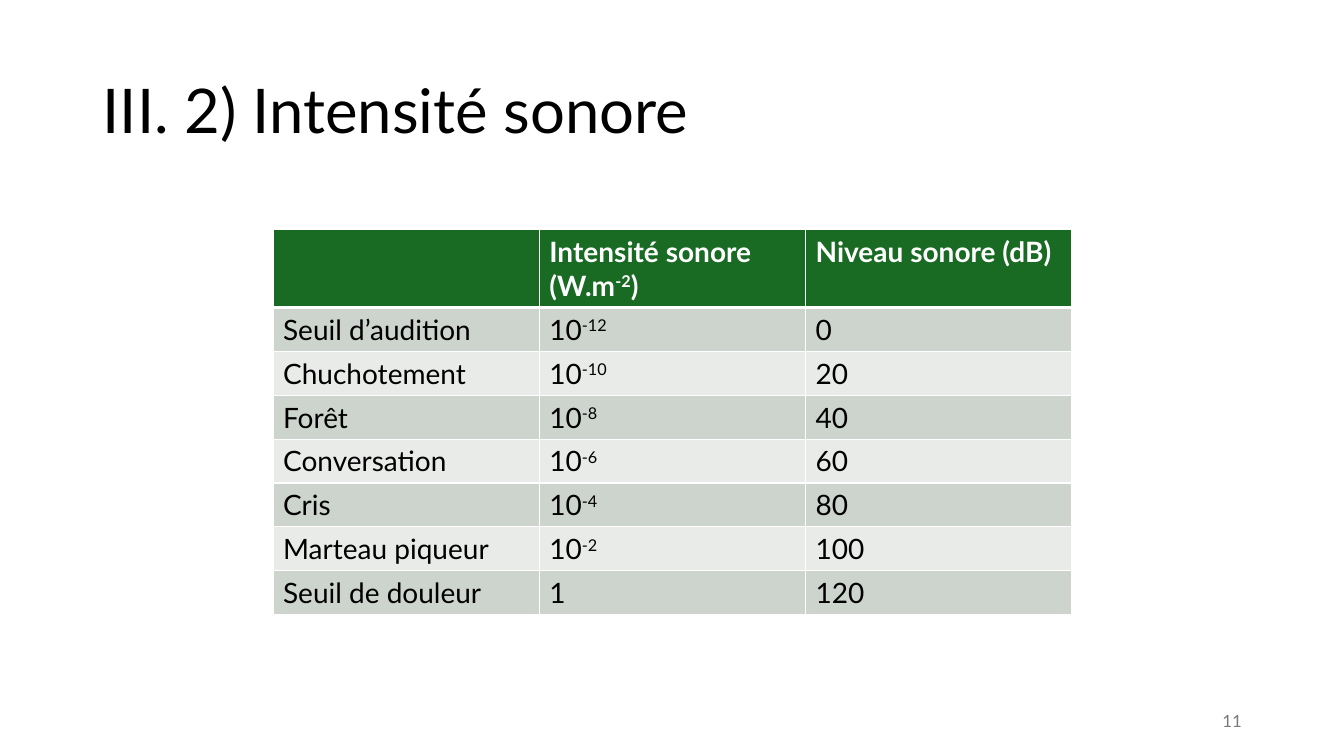
from lxml.etree import SubElement
from pptx import Presentation
from pptx.dml.color import RGBColor
from pptx.enum.text import MSO_ANCHOR, MSO_AUTO_SIZE, PP_ALIGN
from pptx.oxml.ns import qn
from pptx.util import Cm, Pt

FONT = "Lato"
BLACK = RGBColor(0x00, 0x00, 0x00)
WHITE = RGBColor(0xFF, 0xFF, 0xFF)
GREY = RGBColor(0x79, 0x79, 0x79)
GREEN = RGBColor(0x19, 0x6B, 0x24)
BANDS = (RGBColor(0xCC, 0xD4, 0xCD), RGBColor(0xE8, 0xEB, 0xE8))
HEADER_FORMAT = {"size": Pt(20), "bold": True}
BODY_FORMAT = {"size": Pt(20), "bold": False}
COLUMN_WIDTH = Cm(6.71)
HEADER_HEIGHT = Cm(1.94)
ROW_HEIGHT = Cm(1.1)

SOUND_LEVELS = [
    ("", "Intensité sonore (W.m^-2^)", "Niveau sonore (dB)"),
    ("Seuil d’audition", "10^-12", "0"),
    ("Chuchotement", "10^-10", "20"),
    ("Forêt", "10^-8", "40"),
    ("Conversation", "10^-6", "60"),
    ("Cris", "10^-4", "80"),
    ("Marteau piqueur", "10^-2", "100"),
    ("Seuil de douleur", "1", "120"),
]


def write_text(paragraph, text, color, font_format):
    """Write text in which carets enclose superscripts."""
    for index, part in enumerate(text.split("^")):
        if not part:
            continue
        run = paragraph.add_run()
        run.text = part
        run.font.name = FONT
        run.font.color.rgb = color
        for name, value in font_format.items():
            setattr(run.font, name, value)
        if index % 2:
            run._r.get_or_add_rPr().set("baseline", "30000")


def place(shape, left, top, width, height):
    """Set the position and size of a shape in centimetres."""
    bounds = {"left": left, "top": top, "width": width, "height": height}
    for name, value in bounds.items():
        setattr(shape, name, Cm(value))


def format_frame(frame):
    """Make a text frame wrap, centred vertically and with a fixed size."""
    settings = {
        "word_wrap": True,
        "vertical_anchor": MSO_ANCHOR.MIDDLE,
        "auto_size": MSO_AUTO_SIZE.NONE,
    }
    for name, value in settings.items():
        setattr(frame, name, value)


def add_title(slide, text):
    """Fill and format the title placeholder."""
    title = slide.shapes.title
    place(title, 2.33, 1.01, 29.21, 3.68)
    format_frame(title.text_frame)
    paragraph = title.text_frame.paragraphs[0]
    paragraph.alignment = PP_ALIGN.LEFT
    paragraph.line_spacing = 0.9
    write_text(paragraph, text, BLACK, {"size": Pt(44)})


def add_page_number(slide, text):
    """Add the page number at the bottom right."""
    box = slide.shapes.add_textbox(Cm(23.93), Cm(17.65), Cm(7.62), Cm(1.01))
    format_frame(box.text_frame)
    paragraph = box.text_frame.paragraphs[0]
    paragraph.alignment = PP_ALIGN.RIGHT
    write_text(paragraph, text, GREY, {"size": Pt(12)})


def add_borders(cell, widths):
    """Draw white cell borders from a dict of side to width in points."""
    properties = cell._tc.get_or_add_tcPr()
    for side, width in widths.items():
        line = SubElement(properties, qn(f"a:ln{side}"), w=str(Pt(width)))
        fill = SubElement(line, qn("a:solidFill"))
        SubElement(fill, qn("a:srgbClr"), val=str(WHITE))


def add_sound_table(slide):
    """Add the table of sound intensities and levels."""
    row_count, column_count = len(SOUND_LEVELS), len(SOUND_LEVELS[0])
    table = slide.shapes.add_table(
        row_count, column_count, Cm(6.88), Cm(5.79),
        COLUMN_WIDTH * column_count,
        HEADER_HEIGHT + ROW_HEIGHT * (row_count - 1),
    ).table
    for column in table.columns:
        column.width = COLUMN_WIDTH
    for row_index, texts in enumerate(SOUND_LEVELS):
        is_header = row_index == 0
        table.rows[row_index].height = HEADER_HEIGHT if is_header else ROW_HEIGHT
        for column_index, text in enumerate(texts):
            cell = table.cell(row_index, column_index)
            top = 3 if row_index == 1 else 1
            bottom = 3 if is_header else 1
            add_borders(cell, {"L": 1, "R": 1, "T": top, "B": bottom})
            cell.fill.solid()
            cell.fill.fore_color.rgb = GREEN if is_header else BANDS[(row_index - 1) % 2]
            write_text(
                cell.text_frame.paragraphs[0], text,
                WHITE if is_header else BLACK,
                HEADER_FORMAT if is_header else BODY_FORMAT,
            )


def main():
    """Build and save the slide on sound intensity."""
    presentation = Presentation()
    presentation.slide_width = Cm(33.87)
    presentation.slide_height = Cm(19.05)
    slide = presentation.slides.add_slide(presentation.slide_layouts[5])
    add_title(slide, "III. 2) Intensité sonore")
    add_sound_table(slide)
    add_page_number(slide, "11")
    presentation.save("out.pptx")


if __name__ == "__main__":
    main()
